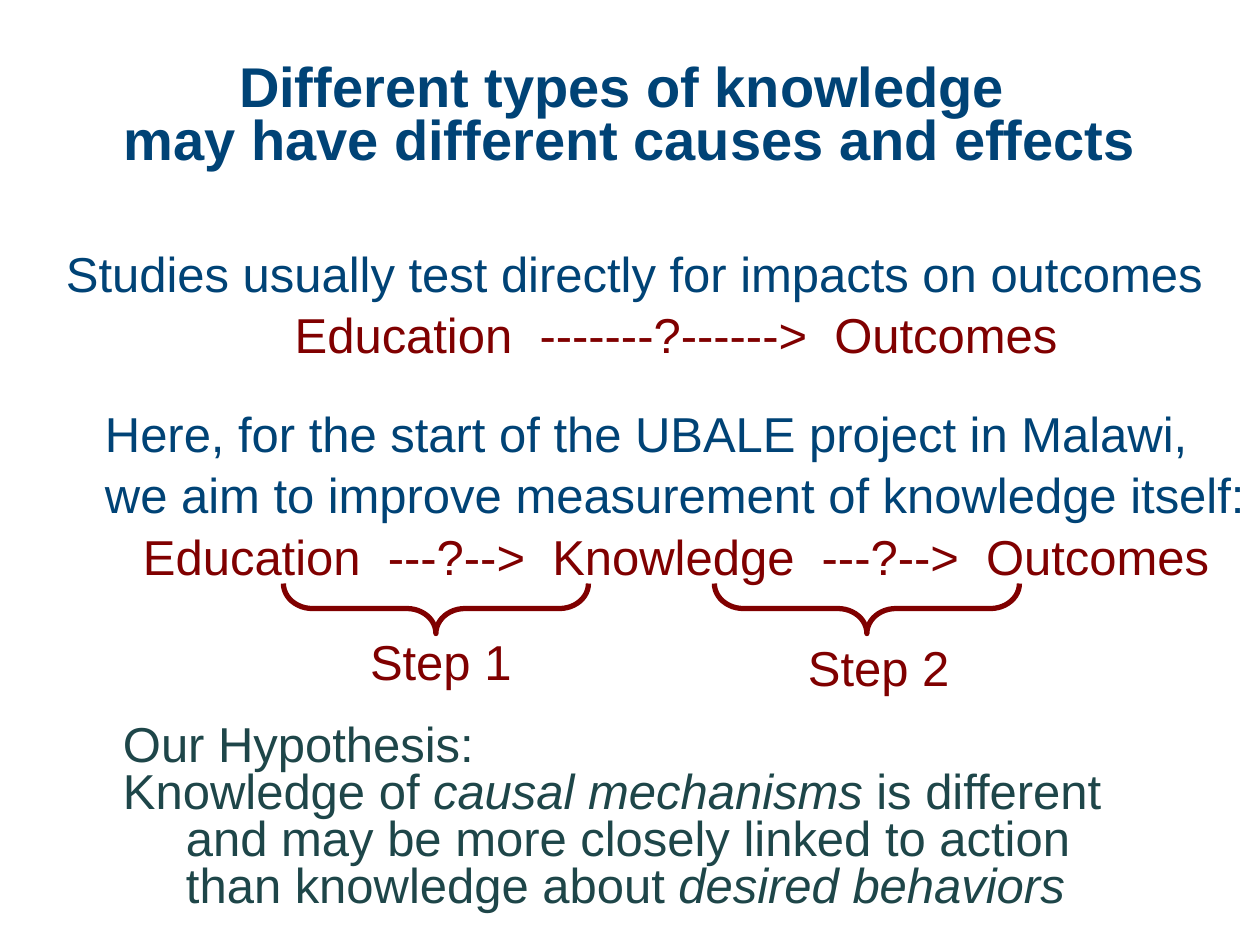
from lxml import etree
from pptx import Presentation
from pptx.dml.color import RGBColor
from pptx.enum.shapes import MSO_SHAPE
from pptx.enum.text import MSO_ANCHOR, MSO_AUTO_SIZE, PP_ALIGN
from pptx.oxml.ns import qn
from pptx.util import Pt

EMU_PER_PX = 914400 / 126
LEFT, CENTER = PP_ALIGN.LEFT, PP_ALIGN.CENTER
TOP, MIDDLE = MSO_ANCHOR.TOP, MSO_ANCHOR.MIDDLE
NO_AUTOFIT = MSO_AUTO_SIZE.NONE
LEFT_BRACE, RECTANGLE = MSO_SHAPE.LEFT_BRACE, MSO_SHAPE.RECTANGLE

FONT = "Arial"
NAVY, MAROON, TEAL, WHITE = "004376", "800000", "1E4649", "FFFFFF"
TITLE_ONLY = 5


def px(length):
    return round(length * EMU_PER_PX)


def rgb(color):
    return RGBColor.from_string(color)


def place(shape, left, top, width, height):
    shape.left, shape.top = px(left), px(top)
    shape.width, shape.height = px(width), px(height)


def prepare_frame(shape, wrap=True, anchor=TOP, margin_top=6):
    frame = shape.text_frame
    frame.word_wrap = wrap
    frame.auto_size = NO_AUTOFIT
    frame.vertical_anchor = anchor
    frame.margin_left = frame.margin_right = px(13)
    frame.margin_top, frame.margin_bottom = px(margin_top), px(6)
    return frame


def write(frame, *runs, color, size=28, bold=False, align=LEFT, spacing=1.0,
          before=0, margin=0, indent=0):
    """Add a paragraph; a run given as a one-item tuple is italic."""
    paragraph = frame.paragraphs[0]
    if paragraph.runs:
        paragraph = frame.add_paragraph()
    properties = paragraph._p.get_or_add_pPr()
    properties.set("marL", str(px(margin)))
    properties.set("indent", str(px(indent)))
    paragraph.alignment = align
    paragraph.line_spacing = spacing
    paragraph.space_before = Pt(before)
    for item in runs:
        italic = isinstance(item, tuple)
        run = paragraph.add_run()
        run.text = item[0] if italic else item
        run.font.name, run.font.size = FONT, Pt(size)
        run.font.bold, run.font.italic = bold, italic
        run.font.color.rgb = rgb(color)


def add_title(slide, *lines):
    title = slide.shapes.title
    place(title, 0, 39, 1260, 158)
    frame = prepare_frame(title, anchor=MIDDLE)
    for line in lines:
        write(frame, line, color=NAVY, size=32, bold=True, align=CENTER,
              spacing=0.8)


def add_panel(slide, left, top, width, height):
    """Add a half-transparent white panel and return its text frame."""
    panel = slide.shapes.add_shape(RECTANGLE, 0, 0, 0, 0)
    place(panel, left, top, width, height)
    panel.shadow.inherit = False
    panel.line.fill.background()
    panel.fill.solid()
    panel.fill.fore_color.rgb = rgb(WHITE)
    fill_color = panel._element.spPr.find(qn("a:solidFill"))[0]
    etree.SubElement(fill_color, qn("a:alpha"), val="50000")
    return prepare_frame(panel, margin_top=12)


def add_text_box(slide, left, top, width, height, wrap=True):
    box = slide.shapes.add_textbox(px(left), px(top), px(width), px(height))
    return prepare_frame(box, wrap=wrap)


def add_brace(slide, left):
    brace = slide.shapes.add_shape(LEFT_BRACE, 0, 0, 0, 0)
    place(brace, left, 456, 50, 305)
    brace.rotation = 270
    brace.adjustments[0], brace.adjustments[1] = 0.58, 0.5
    brace.shadow.inherit = False
    brace.fill.background()
    brace.line.color.rgb = rgb(MAROON)
    brace.line.width = Pt(3)


def main():
    presentation = Presentation()
    presentation.slide_width, presentation.slide_height = px(1260), px(945)
    slide = presentation.slides.add_slide(presentation.slide_layouts[TITLE_ONLY])
    add_title(slide, "Different types of knowledge ",
              "may have different causes and effects")

    panel = add_panel(slide, 53, 231, 1207, 383)
    write(panel, "Studies usually test directly for impacts on outcomes", color=NAVY)
    for text, color, align, before in (
        ("Education  -------?------>  Outcomes", MAROON, CENTER, 1.6),
        ("Here, for the start of the UBALE project in Malawi,", NAVY, LEFT, 22.8),
        ("we aim to improve measurement of knowledge itself:", NAVY, LEFT, 1.6),
        ("Education  ---?-->  Knowledge  ---?-->  Outcomes", MAROON, CENTER, 1.6),
    ):
        write(panel, text, color=color, align=align, before=before, margin=39)

    for label, brace_left, label_left, label_top in (
        ("Step 1", 411, 357, 626),
        ("Step 2", 842, 795, 631),
    ):
        add_brace(slide, brace_left)
        step = add_text_box(slide, label_left, label_top, 169, 72, wrap=False)
        write(step, label, color=MAROON)

    hypothesis = add_text_box(slide, 110, 719, 1040, 203)
    for runs in (
        ["Our Hypothesis:"],
        ["Knowledge of ", ("causal mechanisms ",),
         "is different and may be more closely linked to action "
         "than knowledge about ", ("desired behaviors",)],
    ):
        write(hypothesis, *runs, color=TEAL, spacing=0.8, margin=63, indent=-63)

    presentation.save("out.pptx")


if __name__ == "__main__":
    main()
